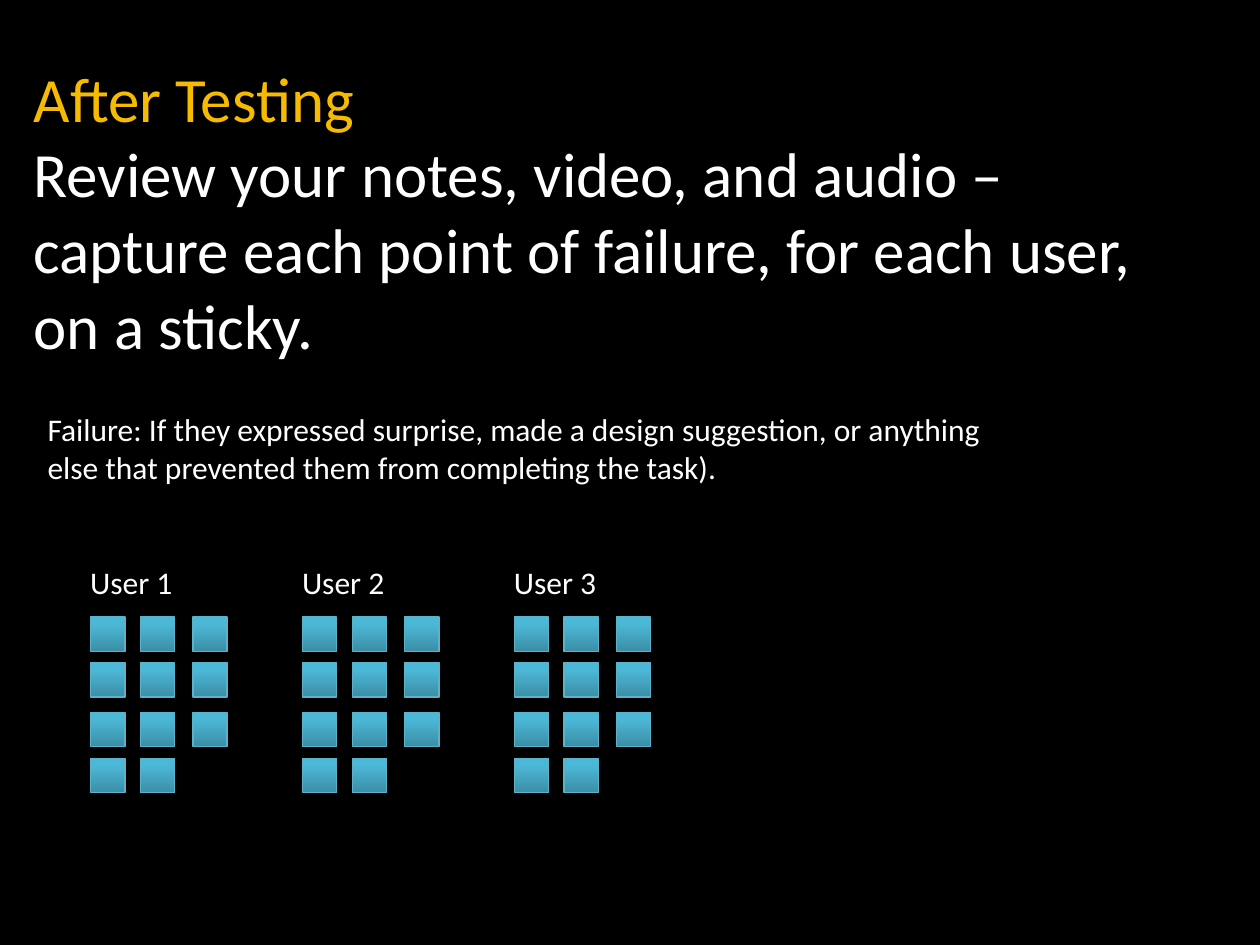
"""Build the After Testing slide with three users' grids of failure notes."""
from lxml import etree
from pptx import Presentation
from pptx.dml.color import RGBColor
from pptx.enum.shapes import MSO_SHAPE
from pptx.enum.text import MSO_ANCHOR
from pptx.oxml import parse_xml
from pptx.oxml.ns import nsdecls, qn
from pptx.util import Cm, Pt

RECTANGLE = MSO_SHAPE.RECTANGLE
TOP = MSO_ANCHOR.TOP
COLORS = {
    "background": "000000",
    "heading": "F6BB00",
    "text": "FFFFFF",
    "note_dark": "3B8EA5",
    "note_middle": "4CB8D7",
    "note_light": "4ABBDA",
    "note_line": "5AB3CB",
    "shadow": "000000",
}
GRADIENT = f"""<a:gradFill {nsdecls("a")} rotWithShape="1"><a:gsLst>
<a:gs pos="0"><a:srgbClr val="{COLORS["note_dark"]}"/></a:gs>
<a:gs pos="80000"><a:srgbClr val="{COLORS["note_middle"]}"/></a:gs>
<a:gs pos="100000"><a:srgbClr val="{COLORS["note_light"]}"/></a:gs>
</a:gsLst><a:lin ang="16200000" scaled="0"/></a:gradFill>"""

presentation = Presentation()
presentation.slide_width = Cm(25.4)
presentation.slide_height = Cm(19.05)
slide = presentation.slides.add_slide(presentation.slide_layouts[6])
slide.background.fill.solid()
slide.background.fill.fore_color.rgb = RGBColor.from_string(COLORS["background"])


def add_text(*lines, left, top, width, height, size, colors):
    box = slide.shapes.add_textbox(Cm(left), Cm(top), Cm(width), Cm(height))
    frame = box.text_frame
    frame.word_wrap = True
    frame.vertical_anchor = TOP
    frame.text = "\n".join(lines)
    for paragraph, color in zip(frame.paragraphs, colors):
        paragraph.font.name = "Calibri"
        paragraph.font.size = Pt(size)
        paragraph.font.color.rgb = RGBColor.from_string(COLORS[color])


add_text(
    "After Testing",
    "Review your notes, video, and audio – capture each point of failure, "
    "for each user, on a sticky.",
    left=0.43, top=1.07, width=22.71, height=1.7, size=36, colors=["heading", "text"],
)
add_text(
    "Failure: If they expressed surprise, made a design suggestion, or anything "
    "else that prevented them from completing the task).",
    left=0.71, top=8.15, width=19.89, height=1.8, size=18, colors=["text"],
)

USER_PITCH = 4.27
NOTE_SIZE = 0.69
NOTES_PER_USER = 11
COLUMN_LEFTS = [1.83, 2.83, 3.89]
ROW_TOPS = [12.44, 13.36, 14.36, 15.29]

for user in range(3):
    offset = user * USER_PITCH
    add_text(
        f"User {user + 1}",
        left=1.57 + offset, top=11.23, width=2.34, height=1.02, size=18, colors=["text"],
    )
    for index in range(NOTES_PER_USER):
        row, column = divmod(index, len(COLUMN_LEFTS))
        note = slide.shapes.add_shape(
            RECTANGLE, Cm(COLUMN_LEFTS[column] + offset), Cm(ROW_TOPS[row]),
            Cm(NOTE_SIZE), Cm(NOTE_SIZE),
        )
        note.line.color.rgb = RGBColor.from_string(COLORS["note_line"])
        note.line.width = Pt(0.75)
        note.shadow.inherit = False
        properties = note.element.spPr
        properties.find(qn("a:prstGeom")).addnext(parse_xml(GRADIENT))
        shadow = etree.SubElement(
            properties.find(qn("a:effectLst")), qn("a:outerShdw"),
            blurRad=str(Pt(3.1)), dist=str(Pt(1.8)), dir="5400000", rotWithShape="0",
        )
        shadow_color = etree.SubElement(shadow, qn("a:srgbClr"), val=COLORS["shadow"])
        etree.SubElement(shadow_color, qn("a:alpha"), val="35000")

presentation.save("out.pptx")
